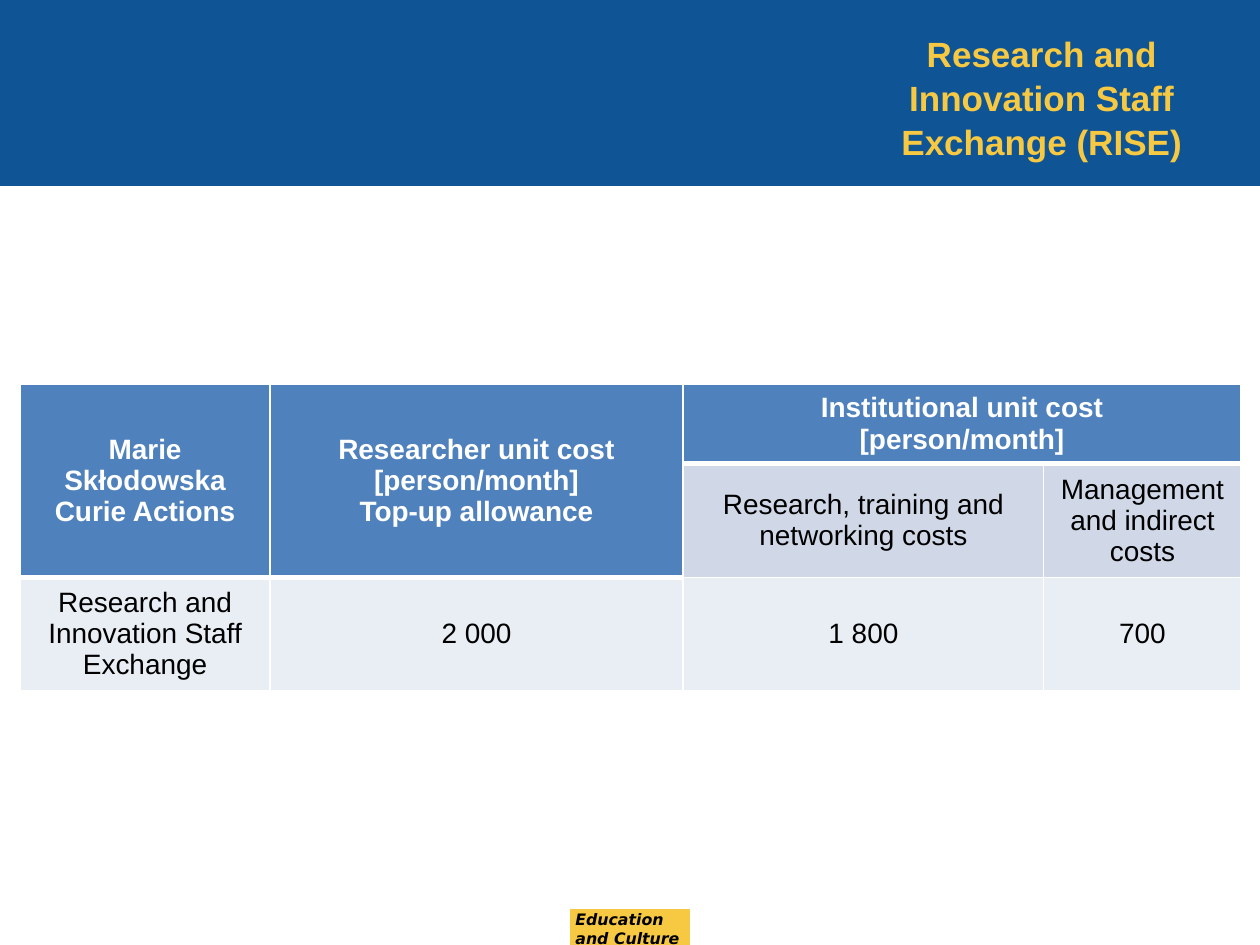
from lxml import etree
from pptx import Presentation
from pptx.dml.color import RGBColor
from pptx.enum.shapes import MSO_SHAPE
from pptx.enum.text import MSO_ANCHOR, PP_ALIGN
from pptx.oxml.ns import qn
from pptx.util import Cm, Pt

RECTANGLE = MSO_SHAPE.RECTANGLE
MIDDLE = MSO_ANCHOR.MIDDLE
CENTER = PP_ALIGN.CENTER

BLUE, GOLD, BLACK, WHITE = "0F5494", "F7C943", "000000", "FFFFFF"
HEADER, SUBHEADER, BODY = "4F81BD", "D0D8E8", "E9EDF4"

TITLE = "Research and Innovation Staff Exchange (RISE)"
DEPARTMENT = ["Education", "and Culture"]
COLUMN_WIDTHS = [5.03, 8.33, 7.27, 3.98]
ROW_HEIGHTS = [1.58, 2.29, 2.29]
COSTS = [
    (0, 0, HEADER, ["Marie Skłodowska Curie Actions"]),
    (0, 1, HEADER, ["Researcher unit cost", "[person/month]", "Top-up allowance"]),
    (0, 2, HEADER, ["Institutional unit cost", "[person/month]"]),
    (1, 2, SUBHEADER, ["Research, training and networking costs"]),
    (1, 3, SUBHEADER, ["Management and indirect costs"]),
    (2, 0, BODY, ["Research and Innovation Staff Exchange"]),
    (2, 1, BODY, ["2 000"]),
    (2, 2, BODY, ["1 800"]),
    (2, 3, BODY, ["700"]),
]
MERGES = [((0, 0), (1, 0)), ((0, 1), (1, 1)), ((0, 2), (0, 3))]
HEADER_ENDS = [1, 1, 0, 0]


def color(value):
    return RGBColor.from_string(value)


def add_run(paragraph, text, size, ink, bold, font="Arial", italic=False):
    run = paragraph.add_run()
    run.text = text
    run.font.name = font
    run.font.size = Pt(size)
    run.font.bold = bold
    run.font.italic = italic
    run.font.color.rgb = color(ink)


def add_bar(slide, left, top, width, height, fill):
    bar = slide.shapes.add_shape(RECTANGLE, Cm(left), Cm(top), Cm(width), Cm(height))
    bar.shadow.inherit = False
    bar.fill.solid()
    bar.fill.fore_color.rgb = color(fill)
    bar.line.color.rgb = color(fill)
    bar.line.width = Pt(0.75)
    slide.shapes._spTree.insert(2, bar._element)


def add_borders(cell, row, column):
    properties = cell._tc.get_or_add_tcPr()
    header_end = HEADER_ENDS[column]
    widths = {
        "a:lnL": 1,
        "a:lnR": 1,
        "a:lnT": 3 if row == header_end + 1 else 1,
        "a:lnB": 3 if row == header_end else 1,
    }
    for side, width in widths.items():
        border = etree.SubElement(properties, qn(side), w=str(Pt(width)))
        fill = etree.SubElement(border, qn("a:solidFill"))
        etree.SubElement(fill, qn("a:srgbClr"), val=WHITE)


def add_title(slide):
    title = slide.shapes.title
    title.left, title.top, title.width, title.height = Cm(16.9), Cm(0.53), Cm(8.2), Cm(2.82)
    title.text_frame.word_wrap = True
    title.text_frame.vertical_anchor = MIDDLE
    paragraph = title.text_frame.paragraphs[0]
    paragraph.alignment = CENTER
    paragraph.line_spacing = 1.05
    add_run(paragraph, TITLE, 20, GOLD, True)


def add_department(slide):
    label = slide.shapes.add_textbox(Cm(11.35), Cm(18.21), Cm(5.23), Cm(1.02))
    label.text_frame.word_wrap = True
    label.text_frame.vertical_anchor = MIDDLE
    paragraph = label.text_frame.paragraphs[0]
    for index, line in enumerate(DEPARTMENT):
        if index:
            paragraph.add_line_break()
        add_run(paragraph, line, 9, BLACK, True, "DejaVu Sans", True)


def add_cost_table(slide):
    table = slide.shapes.add_table(
        len(ROW_HEIGHTS), len(COLUMN_WIDTHS), Cm(0.41), Cm(7.74),
        Cm(sum(COLUMN_WIDTHS)), Cm(sum(ROW_HEIGHTS))).table
    for column, width in zip(table.columns, COLUMN_WIDTHS):
        column.width = Cm(width)
    for row, height in zip(table.rows, ROW_HEIGHTS):
        row.height = Cm(height)
    for row in range(len(ROW_HEIGHTS)):
        for column in range(len(COLUMN_WIDTHS)):
            add_borders(table.cell(row, column), row, column)
    for start, end in MERGES:
        table.cell(*start).merge(table.cell(*end))
    for row, column, fill, lines in COSTS:
        cell = table.cell(row, column)
        cell.fill.solid()
        cell.fill.fore_color.rgb = color(fill)
        cell.vertical_anchor = MIDDLE
        is_header = fill == HEADER
        for index, line in enumerate(lines):
            frame = cell.text_frame
            paragraph = frame.add_paragraph() if index else frame.paragraphs[0]
            paragraph.alignment = CENTER
            add_run(paragraph, line, 16, WHITE if is_header else BLACK, is_header)


def main():
    presentation = Presentation()
    presentation.slide_width, presentation.slide_height = Cm(25.4), Cm(19.05)
    slide = presentation.slides.add_slide(presentation.slide_layouts[5])
    add_bar(slide, 0, 0, 25.4, 3.73, BLUE)
    add_bar(slide, 11.51, 18.34, 2.39, 0.71, GOLD)
    add_title(slide)
    add_department(slide)
    add_cost_table(slide)
    presentation.save("out.pptx")


if __name__ == "__main__":
    main()
